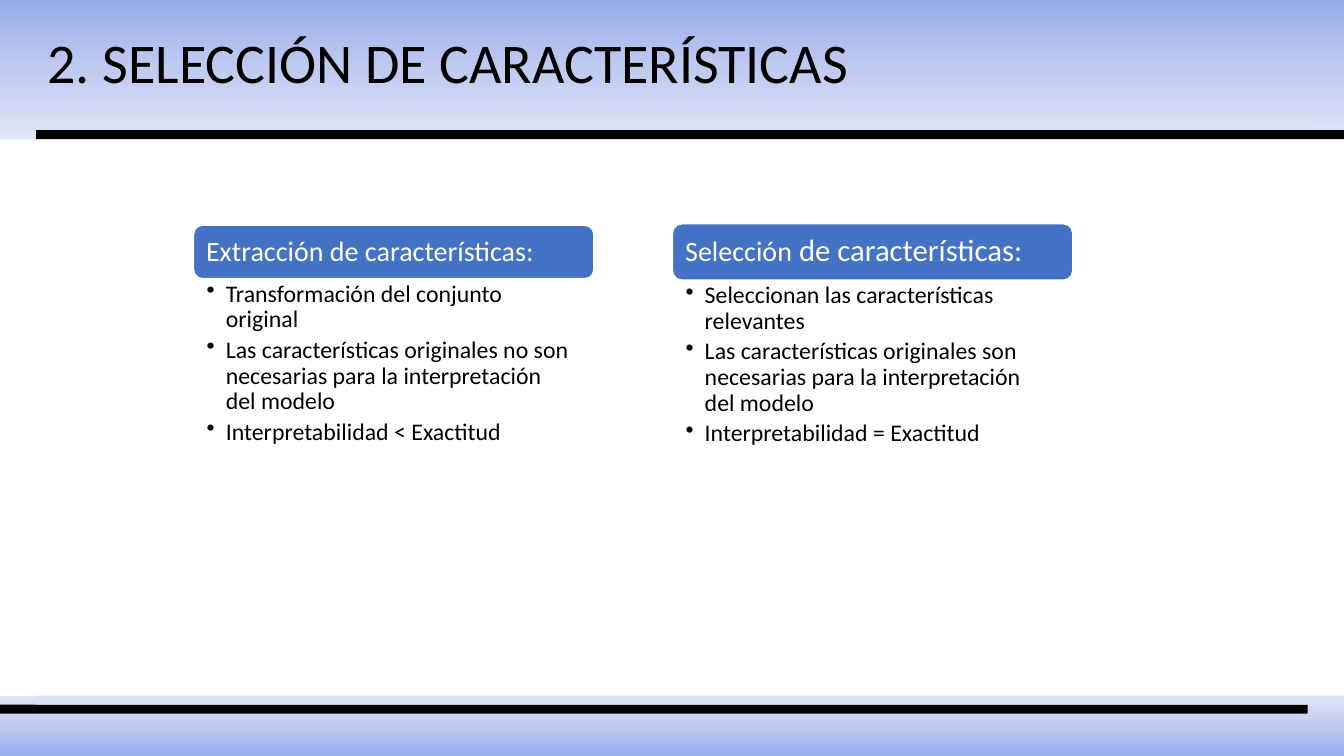
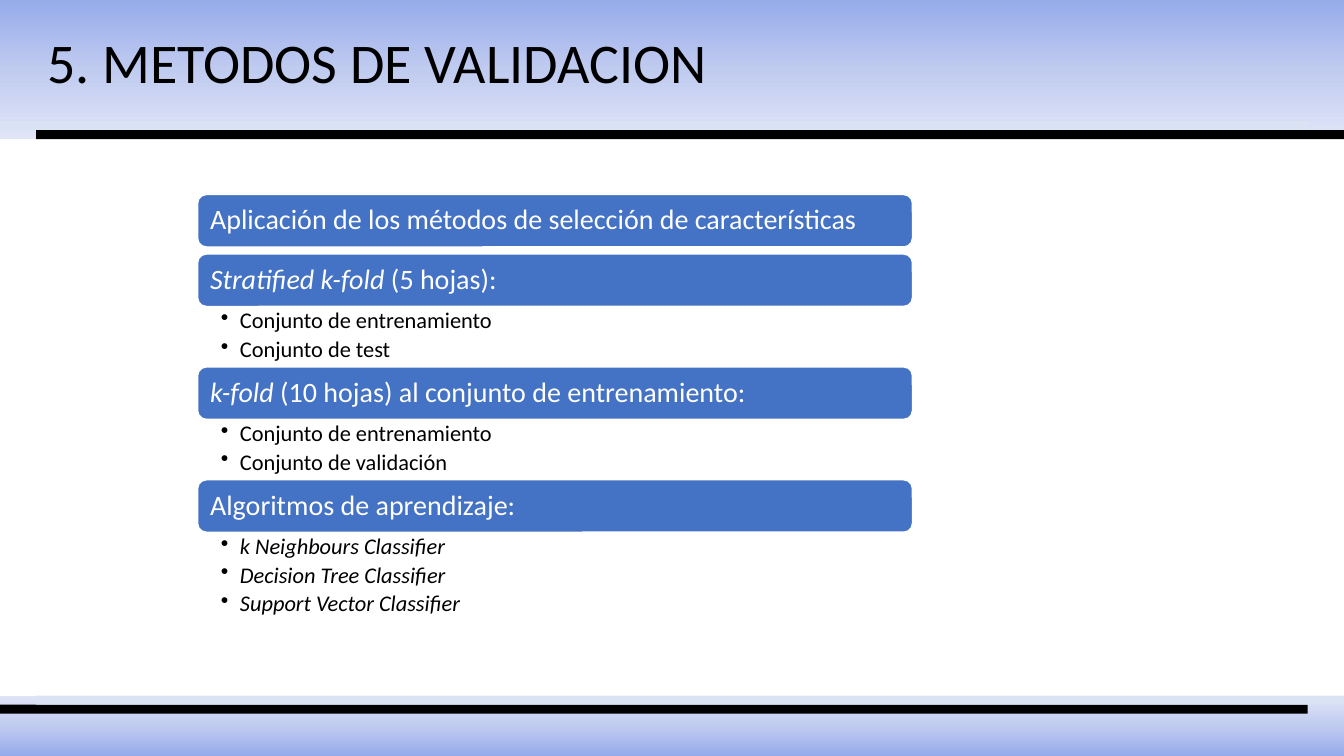
from collections import namedtuple

from lxml.etree import SubElement
from pptx import Presentation
from pptx.dml.color import RGBColor
from pptx.enum.shapes import MSO_SHAPE as Shape
from pptx.enum.text import MSO_ANCHOR as Anchor, PP_ALIGN as Align
from pptx.oxml.ns import qn
from pptx.util import Inches, Pt

COLORS = {
    "band_dark": "96ABEA",
    "band_middle": "C0CBF0",
    "band_light": "E0E5F7",
    "pale_rule": "DAE3F3",
    "black": "000000",
    "white": "FFFFFF",
    "heading": "4472C4",
}
FONT = "Calibri"
SLIDE_WIDTH, SLIDE_HEIGHT = 13.33, 7.5
HEADER_HEIGHT, FOOTER_HEIGHT = 1.38, 0.6
RULE_HEIGHT, RULE_INDENT = 0.09, 0.36

Box = namedtuple("Box", "left top width height")
Run = namedtuple("Run", "text size italic", defaults=(None, None))


def color(name):
    return RGBColor.from_string(COLORS[name])


def lengths(box):
    return [Inches(value) for value in box]


def format_font(font, size, color_name, italic=None):
    font.name = FONT
    font.size = Pt(size)
    font.italic = italic
    font.color.rgb = color(color_name)


def set_insets(frame, left, top, right, bottom):
    frame.margin_left, frame.margin_top = Inches(left), Inches(top)
    frame.margin_right, frame.margin_bottom = Inches(right), Inches(bottom)


def add_block(slide, kind, box, fill_name):
    shape = slide.shapes.add_shape(kind, *lengths(box))
    shape.shadow.inherit = False
    shape.fill.solid()
    shape.fill.fore_color.rgb = color(fill_name)
    shape.line.fill.background()
    return shape


def add_gradient_band(slide, box, rotation):
    band = add_block(slide, Shape.RECTANGLE, box, "band_dark")
    band.rotation = rotation
    band.fill.gradient()
    band.fill.gradient_angle = 270
    stops = next(band.element.iter(qn("a:gsLst")))
    stops.clear()
    for position, name in ((0, "band_dark"), (50, "band_middle"), (100, "band_light")):
        stop = SubElement(stops, qn("a:gs"), pos=str(position * 1000))
        SubElement(stop, qn("a:srgbClr"), val=COLORS[name])
    return band


def move_bands_to_layout(slide, layout):
    footer_top = SLIDE_HEIGHT - FOOTER_HEIGHT
    bands = [
        add_gradient_band(slide, Box(0, 0, SLIDE_WIDTH, HEADER_HEIGHT), 0),
        add_gradient_band(slide, Box(0, footer_top, SLIDE_WIDTH, FOOTER_HEIGHT), 180),
    ]
    rules = (
        (0, HEADER_HEIGHT - 2 * RULE_HEIGHT, "pale_rule"),
        (RULE_INDENT, HEADER_HEIGHT - RULE_HEIGHT, "black"),
        (0, footer_top + RULE_HEIGHT, "black"),
        (RULE_INDENT, footer_top, "pale_rule"),
    )
    for left, top, fill_name in rules:
        box = Box(left, top, SLIDE_WIDTH - RULE_INDENT, RULE_HEIGHT)
        bands.append(add_block(slide, Shape.RECTANGLE, box, fill_name))
    for index, band in enumerate(bands):
        layout.shapes.element.insert(2 + index, band.element)


def format_title(slide, text, width):
    title = slide.shapes.title
    title.left, title.top, title.width, title.height = lengths(Box(0.37, 0.22, width, 0.77))
    frame = title.text_frame
    frame.text = text
    frame.word_wrap = True
    frame.vertical_anchor = Anchor.TOP
    paragraph = frame.paragraphs[0]
    paragraph.alignment = Align.LEFT
    format_font(paragraph.font, 40, "black")


def add_heading(slide, box, runs):
    shape = add_block(slide, Shape.ROUNDED_RECTANGLE, box, "heading")
    shape.line.color.rgb = color("white")
    shape.line.width = Pt(1)
    frame = shape.text_frame
    frame.word_wrap = True
    frame.vertical_anchor = Anchor.MIDDLE
    set_insets(frame, 0.1, 0.08, 0.1, 0.08)
    paragraph = frame.paragraphs[0]
    paragraph.alignment = Align.LEFT
    paragraph.line_spacing = 0.9
    format_font(paragraph.font, 20, "white")
    for item in runs:
        run = paragraph.add_run()
        run.text = item.text
        run.font.italic = item.italic
        if item.size:
            run.font.size = Pt(item.size)


def add_bullets(slide, box, items, size, inset, italic=None):
    frame = slide.shapes.add_textbox(*lengths(box)).text_frame
    frame.word_wrap = True
    set_insets(frame, inset, 0.03, 0.17, 0.03)
    for index, item in enumerate(items):
        paragraph = frame.add_paragraph() if index else frame.paragraphs[0]
        paragraph.text = item
        paragraph.line_spacing = 0.9
        paragraph.space_after = Pt(size * 0.2)
        format_font(paragraph.font, size, "black", italic)
        properties = paragraph._p.get_or_add_pPr()
        properties.set("marL", str(Inches(0.19)))
        properties.set("indent", str(-Inches(0.19)))
        bullet = SubElement(properties, qn("a:buChar"), char="•")
        properties.find(qn("a:defRPr")).addprevious(bullet)


def add_comparison(slide, area, columns):
    column_width = 3.97
    step = area.width - column_width
    for index, (heading_height, runs, items) in enumerate(columns):
        left = area.left + index * step
        top = area.top + (area.height - heading_height) / 2
        add_heading(slide, Box(left, top, column_width, heading_height), runs)
        bullets_box = Box(left, top + heading_height, column_width, 1.74)
        add_bullets(slide, bullets_box, items, 17, 0.13)


def add_steps(slide, area, steps):
    heading_height, bullet_height, gap = 0.52, 0.3, 0.07
    top = area.top
    for runs, items, italic in steps:
        add_heading(slide, Box(area.left, top, area.width, heading_height), runs)
        top += heading_height
        if items:
            height = bullet_height * len(items)
            add_bullets(slide, Box(area.left, top, area.width, height), items, 16, 0.23, italic)
            top += height
        else:
            top += gap


def main():
    presentation = Presentation()
    presentation.slide_width = Inches(SLIDE_WIDTH)
    presentation.slide_height = Inches(SLIDE_HEIGHT)
    layout = presentation.slide_layouts[5]

    selection = presentation.slides.add_slide(layout)
    move_bands_to_layout(selection, layout)
    format_title(selection, "2. SELECCIÓN DE CARACTERÍSTICAS", 8.28)
    add_comparison(selection, Box(1.92, 2.22, 8.72, 0.56), [
        (0.53, [Run("Extracción de características:")], [
            "Transformación del conjunto original",
            "Las características originales no son necesarias para la interpretación del modelo",
            "Interpretabilidad < Exactitud",
        ]),
        (0.56, [Run("Selección"), Run(" de características:", 22)], [
            "Seleccionan las características relevantes",
            "Las características originales son necesarias para la interpretación del modelo",
            "Interpretabilidad = Exactitud",
        ]),
    ])

    validation = presentation.slides.add_slide(layout)
    format_title(validation, "5. METODOS DE VALIDACION", 6.95)
    add_steps(validation, Box(1.96, 1.93, 7.09, 4.27), [
        ([Run("Aplicación de los métodos de selección de características")], [], None),
        ([Run("Stratified k-fold", italic=True), Run(" (5 hojas):")],
         ["Conjunto de entrenamiento", "Conjunto de test"], None),
        ([Run("k-fold", italic=True), Run(" (10 hojas) al conjunto de entrenamiento:")],
         ["Conjunto de entrenamiento", "Conjunto de validación"], None),
        ([Run("Algoritmos de aprendizaje:")],
         ["k Neighbours Classifier", "Decision Tree Classifier", "Support Vector Classifier"], True),
    ])

    presentation.save("out.pptx")


if __name__ == "__main__":
    main()
